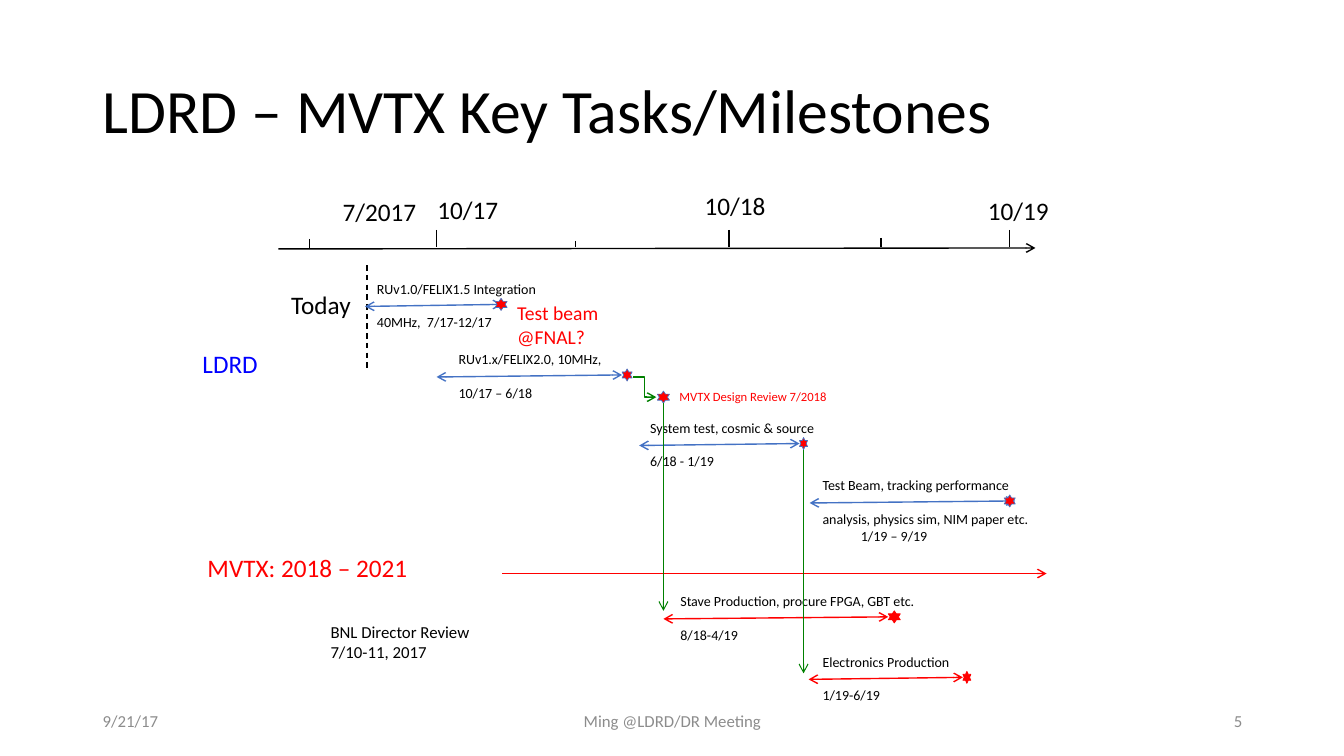
from lxml import etree
from pptx import Presentation
from pptx.dml.color import RGBColor
from pptx.enum.dml import MSO_LINE
from pptx.enum.shapes import MSO_CONNECTOR, MSO_SHAPE
from pptx.enum.text import MSO_ANCHOR, PP_ALIGN
from pptx.oxml.ns import qn
from pptx.util import Inches, Pt

STRAIGHT, ELBOW = MSO_CONNECTOR.STRAIGHT, MSO_CONNECTOR.ELBOW
STAR = MSO_SHAPE.STAR_6_POINT
DASH = MSO_LINE.DASH
TOP, MIDDLE = MSO_ANCHOR.TOP, MSO_ANCHOR.MIDDLE
LEFT, CENTER, RIGHT = PP_ALIGN.LEFT, PP_ALIGN.CENTER, PP_ALIGN.RIGHT

FONT = "Calibri"
BLACK, RED, BLUE, GREEN = "000000", "FF0000", "4472C4", "008000"
NAVY, GRAY = "0000FF", "8C8C8C"

# lines, text left and width, arrow start, end and height, star left and width, colour
TASKS = [
    (["RUv1.0/FELIX1.5 Integration", "40MHz,  7/17-12/17"],
     3.64, 2.21, 3.62, 4.98, 3.04, 4.91, 0.12, BLUE),
    (["RUv1.x/FELIX2.0, 10MHz,", "10/17 – 6/18"],
     4.45, 2.16, 4.33, 6.17, 3.74, 6.17, 0.1, BLUE),
    (["System test, cosmic & source", "6/18 - 1/19"],
     6.35, 1.89, 6.34, 7.93, 4.42, 7.93, 0.08, BLUE),
    (["Test Beam, tracking performance", "analysis, physics sim, NIM paper etc.",
      "1/19 – 9/19"],
     8.06, 2.4, 8.03, 10.07, 4.99, 9.96, 0.11, BLUE),
    (["Stave Production, procure FPGA, GBT etc.", "8/18-4/19"],
     6.65, 2.57, 6.58, 8.81, 6.14, 8.81, 0.12, RED),
    (["Electronics Production", "1/19-6/19"],
     8.06, 1.73, 8.02, 9.55, 6.74, 9.55, 0.08, RED),
]

# lines, left, top, width, height, size, colour
LABELS = [
    (["7/2017"], 3.3, 1.9, 0.94, 0.4, 18, BLACK),
    (["10/17"], 4.24, 1.88, 0.81, 0.4, 18, BLACK),
    (["10/18"], 6.89, 1.84, 0.81, 0.4, 18, BLACK),
    (["10/19"], 9.7, 1.89, 0.81, 0.4, 18, BLACK),
    (["Today"], 2.79, 2.82, 0.83, 0.4, 18, BLACK),
    (["LDRD"], 1.91, 3.41, 0.76, 0.4, 18, NAVY),
    (["MVTX: 2018 – 2021"], 1.96, 5.43, 2.2, 0.4, 18, RED),
    (["Test beam", "@FNAL?"], 5.03, 2.94, 1.03, 0.57, 14, RED),
    (["BNL Director Review", "7/10-11, 2017"], 3.18, 6.12, 1.6, 0.5, 12, BLACK),
    (["MVTX Design Review 7/2018"], 6.64, 3.81, 1.68, 0.25, 9, RED),
]

# x, top, bottom
TICKS = [(3.07, 2.37, 2.47), (4.33, 2.28, 2.45), (5.71, 2.39, 2.45),
         (7.23, 2.28, 2.45), (8.74, 2.36, 2.45), (10.01, 2.28, 2.45)]

# text, left, width, alignment
FOOTER = [("9/21/17", 0.92, 3, LEFT),
          ("Ming @LDRD/DR Meeting", 4.42, 4.5, CENTER),
          ("5", 9.42, 3, RIGHT)]


def color(code):
    return RGBColor.from_string(code)


def add_text(slide, lines, x, y, w, h, size, code, wrap=False, anchor=TOP, align=LEFT):
    box = slide.shapes.add_textbox(Inches(x), Inches(y), Inches(w), Inches(h))
    frame = box.text_frame
    frame.word_wrap = wrap
    frame.vertical_anchor = anchor
    frame.text = "\n".join(lines)
    for para in frame.paragraphs:
        para.alignment = align
        para.font.name = FONT
        para.font.size = Pt(size)
        para.font.color.rgb = color(code)
    return frame.paragraphs


def add_line(slide, x1, y1, x2, y2, code, width=1, ends=(), kind=STRAIGHT):
    """Draw a connector; ends names the arrowheads, headEnd before tailEnd."""
    line = slide.shapes.add_connector(kind, Inches(x1), Inches(y1), Inches(x2), Inches(y2))
    line.line.color.rgb = color(code)
    line.line.width = Pt(width)
    props = line._element.spPr
    for end in ends:
        etree.SubElement(props.find(qn("a:ln")), qn("a:" + end), type="arrow")
    etree.SubElement(props, qn("a:effectLst"))
    return line


def add_star(slide, x, y, w, code):
    star = slide.shapes.add_shape(STAR, Inches(x), Inches(y), Inches(w), Inches(0.12))
    star.shadow.inherit = False
    star.fill.solid()
    star.fill.fore_color.rgb = color(RED)
    star.line.color.rgb = color(code)
    star.line.width = Pt(0.5)


def add_task(slide, lines, left, width, start, end, y, star, size, code):
    """Draw a double arrow with text above and below it and a star at its end."""
    height = 0.61 + 0.16 * (len(lines) - 2)
    paras = add_text(slide, lines, left, y - 0.31, width, height, 10, BLACK, wrap=True)
    paras[1].space_before = Pt(12)
    for para in paras[2:]:
        para._p.get_or_add_pPr().set("marL", str(Inches(0.38)))
    add_line(slide, start, y, end, y - 0.02, code, ends=("headEnd", "tailEnd"))
    add_star(slide, star, y - 0.08, size, code)


def main():
    deck = Presentation()
    deck.slide_width, deck.slide_height = Inches(13.33), Inches(7.5)
    slide = deck.slides.add_slide(deck.slide_layouts[6])

    title = add_text(slide, ["LDRD – MVTX Key Tasks/Milestones"], 0.92, 0.4, 11.5, 1.45,
                     44, BLACK, wrap=True, anchor=MIDDLE)
    title[0].line_spacing = 0.9

    tail = ("tailEnd",)
    add_line(slide, 2.76, 2.47, 10.27, 2.46, BLACK, ends=tail)
    for x, top, bottom in TICKS:
        add_line(slide, x, top, x, bottom, BLACK)
    add_line(slide, 4.98, 5.69, 10.38, 5.69, RED, ends=tail)
    today = add_line(slide, 3.64, 2.63, 3.64, 3.69, BLACK)
    today.line.dash_style = DASH

    for task in TASKS:
        add_task(slide, *task)
    add_star(slide, 6.52, 3.88, 0.12, BLUE)
    add_line(slide, 6.28, 3.74, 6.51, 3.94, GREEN, ends=tail, kind=ELBOW)
    add_line(slide, 6.58, 4, 6.58, 6.06, GREEN, 0.75, tail)
    add_line(slide, 7.97, 4.46, 7.97, 6.68, GREEN, 0.75, tail)

    for label in LABELS:
        add_text(slide, *label)
    for text, x, w, align in FOOTER:
        add_text(slide, [text], x, 6.95, w, 0.4, 12, GRAY, True, MIDDLE, align)

    deck.save("out.pptx")


if __name__ == "__main__":
    main()
